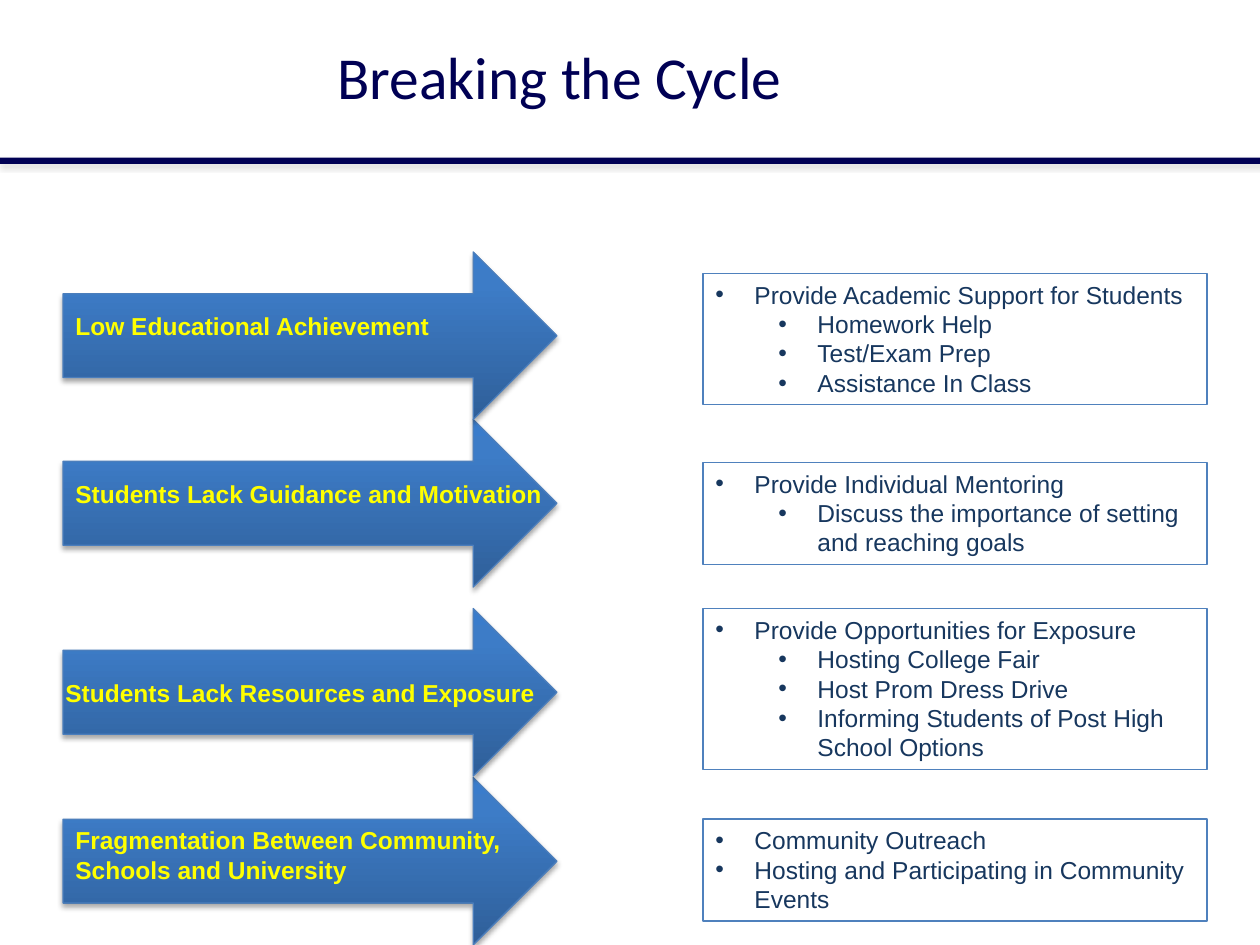
from pptx import Presentation
from pptx.dml.color import RGBColor
from pptx.enum.shapes import MSO_SHAPE as Shape
from pptx.enum.text import MSO_ANCHOR as Anchor, MSO_AUTO_SIZE as AutoSize, PP_ALIGN as Align
from pptx.oxml import parse_xml
from pptx.oxml.ns import nsdecls
from pptx.util import Inches, Pt

# Content
TITLE = "Breaking the Cycle"
# problem, arrow top, (label left, top, width, height)
PROBLEMS = [
    ("Low Educational Achievement", 2, (0.5, 2.42, 4, 0.34)),
    ("Students Lack Guidance and Motivation", 3.33, (0.5, 3.75, 4, 0.34)),
    ("Students Lack Resources and Exposure", 4.83, (0.42, 5.33, 3.98, 0.34)),
    ("Fragmentation Between Community, Schools and University", 6.17, (0.5, 6.5, 4, 0.57)),
]
# box top, box height, [(level, response)]
RESPONSES = [
    (2.17, 1.04, [(0, "Provide Academic Support for Students"), (1, "Homework Help"),
                  (1, "Test/Exam Prep"), (1, "Assistance In Class")]),
    (3.67, 0.81, [(0, "Provide Individual Mentoring"),
                  (1, "Discuss the importance of setting and reaching goals")]),
    (4.83, 1.28, [(0, "Provide Opportunities for Exposure"), (1, "Hosting College Fair"),
                  (1, "Host Prom Dress Drive"),
                  (1, "Informing Students of Post High School Options")]),
    (6.5, 0.81, [(0, "Community Outreach"),
                 (0, "Hosting and Participating in Community Events")]),
]

# Style
COLORS = {"navy": "000054", "label": "FFFF00", "response": "17375E", "box": "4F81BD",
          "arrow": "4B7EBC", "bar shadow": "808080", "arrow shadow": "000000"}
ARROW_STOPS = [(0, "2F5F99"), (80, "3D7CC7"), (100, "3A7CCB")]
ARROW_LEFT, ARROW_WIDTH, ARROW_HEIGHT = 0.5, 3.92, 1.33
BOX_LEFT, BOX_WIDTH = 5.58, 4
INDENT, LEVEL_STEP = 0.31, 0.5


def rgb(name):
    return RGBColor.from_string(COLORS[name])


def add_shadow(shape, color):
    shape.shadow.inherit = False
    shape._element.spPr.effectLst.append(parse_xml(
        f'<a:outerShdw {nsdecls("a")} blurRad="{Pt(3.1)}" dist="{Pt(1.8)}" dir="5400000" '
        f'rotWithShape="0"><a:srgbClr val="{COLORS[color]}"><a:alpha val="35000"/>'
        '</a:srgbClr></a:outerShdw>'))


def add_run(paragraph, text, font, size, color, bold=False):
    run = paragraph.add_run()
    run.text = text
    run.font.name, run.font.size, run.font.bold = font, Pt(size), bold
    run.font.color.rgb = rgb(color)


def add_text_box(*place):
    box = slide.shapes.add_textbox(*map(Inches, place))
    box.text_frame.word_wrap = True
    box.text_frame.auto_size = AutoSize.SHAPE_TO_FIT_TEXT
    return box


def add_bullet(paragraph, level):
    paragraph.level = level
    pPr = paragraph._p.get_or_add_pPr()
    pPr.set("marL", str(Inches(INDENT + level * LEVEL_STEP)))
    pPr.set("indent", str(-Inches(INDENT)))
    pPr.append(parse_xml(f'<a:buFont {nsdecls("a")} typeface="Arial"/>'))
    pPr.append(parse_xml(f'<a:buChar {nsdecls("a")} char="•"/>'))


def add_arrow(top):
    arrow = slide.shapes.add_shape(Shape.RIGHT_ARROW, Inches(ARROW_LEFT), Inches(top),
                                   Inches(ARROW_WIDTH), Inches(ARROW_HEIGHT))
    stops = "".join(f'<a:gs pos="{pos * 1000}"><a:srgbClr val="{color}"/></a:gs>'
                    for pos, color in ARROW_STOPS)
    arrow._element.spPr.append(parse_xml(
        f'<a:gradFill {nsdecls("a")} rotWithShape="1"><a:gsLst>{stops}</a:gsLst>'
        '<a:lin ang="16200000" scaled="0"/></a:gradFill>'))
    arrow.line.color.rgb = rgb("arrow")
    arrow.line.width = Pt(0.75)
    add_shadow(arrow, "arrow shadow")


prs = Presentation()
prs.slide_width, prs.slide_height = Inches(10), Inches(7.5)
slide = prs.slides.add_slide(prs.slide_layouts[5])

# Title and the bar below it
title = slide.shapes.title
title.left, title.top, title.width, title.height = map(Inches, (2.58, 0.06, 7.33, 1.08))
title.text_frame.vertical_anchor = Anchor.MIDDLE
heading = title.text_frame.paragraphs[0]
heading.alignment = Align.LEFT
add_run(heading, TITLE, "Calibri", 34, "navy")

bar = slide.shapes.add_shape(Shape.RECTANGLE, 0, Inches(1.25), Inches(10.08), Inches(0.05))
bar.fill.solid()
bar.fill.fore_color.rgb = rgb("navy")
bar.line.fill.background()
add_shadow(bar, "bar shadow")

# Problems: arrows from the lowest up, then their labels
for _, top, _ in reversed(PROBLEMS):
    add_arrow(top)
for problem, _, place in PROBLEMS:
    label = add_text_box(*place)
    add_run(label.text_frame.paragraphs[0], problem, "Arial", 14, "label", bold=True)

# Responses: outlined bullet lists
for top, height, items in RESPONSES:
    box = add_text_box(BOX_LEFT, top, BOX_WIDTH, height)
    box.line.color.rgb = rgb("box")
    box.line.width = Pt(0.75)
    frame = box.text_frame
    for i, (level, response) in enumerate(items):
        paragraph = frame.add_paragraph() if i else frame.paragraphs[0]
        add_bullet(paragraph, level)
        add_run(paragraph, response, "Arial", 14, "response")

prs.save("out.pptx")
